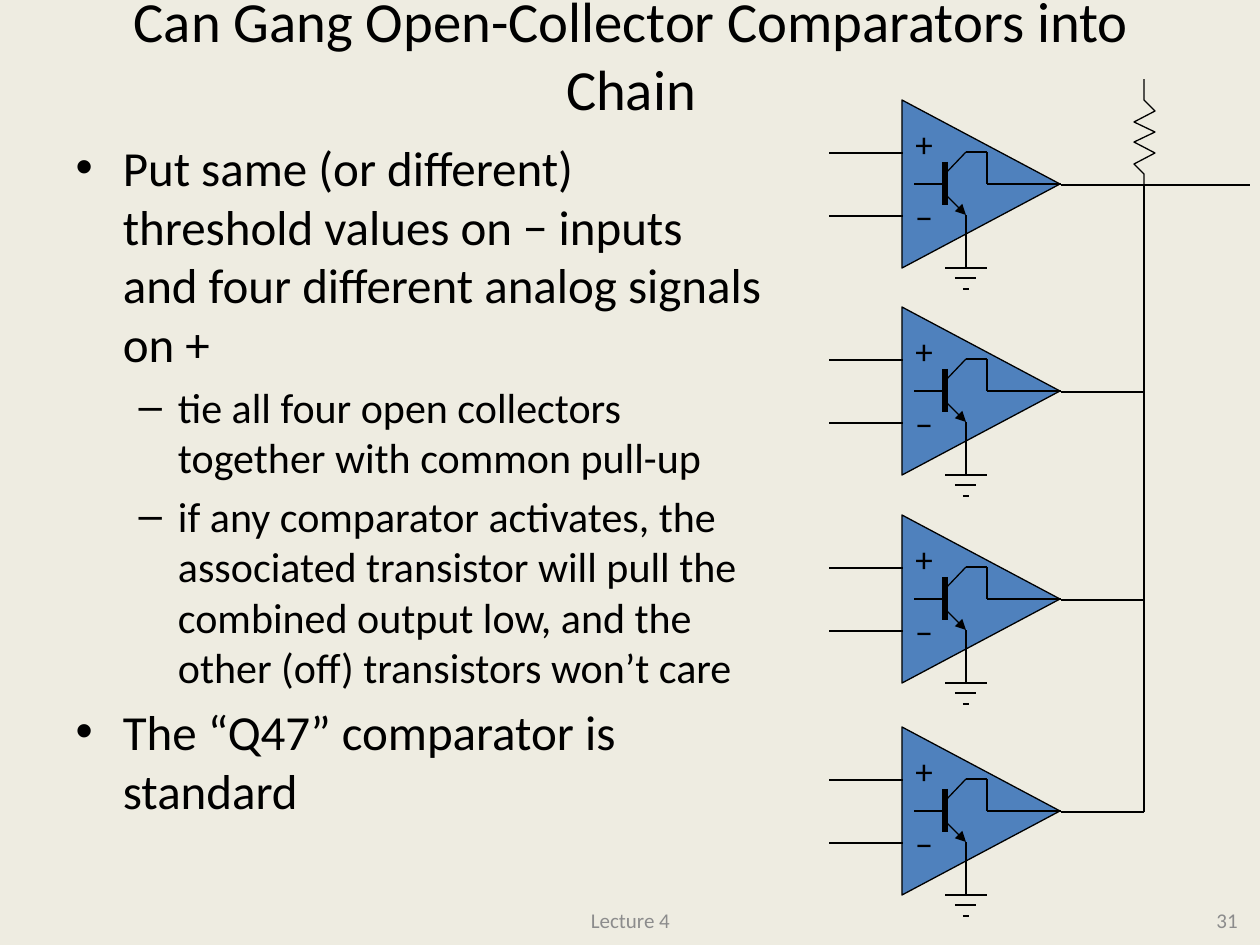
from lxml import etree
from pptx import Presentation
from pptx.dml.color import RGBColor
from pptx.enum.shapes import MSO_CONNECTOR, MSO_SHAPE
from pptx.enum.text import MSO_ANCHOR, MSO_AUTO_SIZE, PP_ALIGN
from pptx.oxml.ns import qn
from pptx.util import Pt

PX = 914400 / 126
STRAIGHT = MSO_CONNECTOR.STRAIGHT
TRIANGLE = MSO_SHAPE.ISOSCELES_TRIANGLE
MIDDLE = MSO_ANCHOR.MIDDLE
NO_AUTOFIT = MSO_AUTO_SIZE.NONE
LEFT, CENTER, RIGHT = PP_ALIGN.LEFT, PP_ALIGN.CENTER, PP_ALIGN.RIGHT

BACKGROUND = RGBColor(0xEE, 0xEC, 0xE1)
BLACK = RGBColor(0x00, 0x00, 0x00)
GRAY = RGBColor(0x8C, 0x8C, 0x8C)
BLUE = RGBColor(0x4F, 0x81, 0xBD)
FONT = "Calibri"

TITLE = "Can Gang Open-Collector Comparators into Chain"
BULLETS = [
    (0, "Put same (or different) threshold values on − inputs and four different analog signals on +"),
    (1, "tie all four open collectors together with common pull-up"),
    (1, "if any comparator activates, the associated transistor will pull the "
        "combined output low, and the other (off) transistors won’t care"),
    (0, "The “Q47” comparator is standard"),
]
BULLET_SIZES = (28, 24)

COMPARATOR_LEFT = 829
COMPARATOR_TOPS = (100, 307, 515, 727)
OUTPUT_X, OUTPUT_Y = 315, 85
COMPARATOR_WIRES = [
    (74, 53, 0, 53),
    (74, 116, 0, 116),
    (232, OUTPUT_Y, OUTPUT_X, OUTPUT_Y),
    (116, 74, 137, 52),
    (116, 84, 85, 84),
    (137, 115, 137, 157),
    (137, 52, 158, 52),
    (158, 52, 158, 84),
    (158, 84, 232, 84),
]
GROUND_WIRES = [(21, 0, 21, 21), (0, 21, 42, 21), (10, 31, 31, 31), (18, 42, 24, 42)]


def px(*lengths):
    """Convert pixel lengths to EMU."""
    return [round(length * PX) for length in lengths]


def set_font(paragraph, size, color):
    """Set the font of a whole paragraph."""
    paragraph.font.name = FONT
    paragraph.font.size = Pt(size)
    paragraph.font.color.rgb = color


def place(shape, left, top, width, height):
    """Move a placeholder to a pixel box."""
    shape.left, shape.top, shape.width, shape.height = px(left, top, width, height)


def add_label(shapes, box, text, size, color, alignment, wrap=True):
    """Add a one-line text box."""
    frame = shapes.add_textbox(*px(*box)).text_frame
    frame.word_wrap = wrap
    frame.vertical_anchor = MIDDLE
    paragraph = frame.paragraphs[0]
    paragraph.text = text
    paragraph.alignment = alignment
    set_font(paragraph, size, color)


def add_wire(shapes, left, top, wire, width=0.75, arrow=False):
    """Add a straight line given relative to a corner."""
    x1, y1, x2, y2 = wire
    connector = shapes.add_connector(
        STRAIGHT, *px(left + x1, top + y1, left + x2, top + y2))
    connector.line.color.rgb = BLACK
    connector.line.width = Pt(width)
    properties = connector.element.spPr
    if arrow:
        etree.SubElement(properties.find(qn("a:ln")), qn("a:tailEnd"), type="triangle")
    etree.SubElement(properties, qn("a:effectLst"))


def add_title(slide, box):
    """Fill the title placeholder."""
    title = slide.shapes.title
    place(title, *box)
    frame = title.text_frame
    frame.text = TITLE
    frame.auto_size = NO_AUTOFIT
    frame.vertical_anchor = MIDDLE
    set_font(frame.paragraphs[0], 32.4, BLACK)


def add_bullets(slide, box):
    """Fill the body placeholder with the two-level list."""
    body = slide.placeholders[1]
    place(body, *box)
    frame = body.text_frame
    frame.text = "\n".join(text for _, text in BULLETS)
    frame.auto_size = NO_AUTOFIT
    for paragraph, (level, _) in zip(frame.paragraphs, BULLETS):
        paragraph.level = level
        set_font(paragraph, BULLET_SIZES[level], BLACK)


def add_ground(slide, left, top):
    """Draw a ground symbol as a group."""
    shapes = slide.shapes.add_group_shape().shapes
    for wire in GROUND_WIRES:
        add_wire(shapes, left, top, wire)


def add_comparator(slide, left, top):
    """Draw one open-collector comparator with its output transistor."""
    shapes = slide.shapes.add_group_shape().shapes
    triangle = shapes.add_shape(TRIANGLE, *px(left + 68, top + 5, 168, 158))
    triangle.rotation = 90
    triangle.shadow.inherit = False
    triangle.fill.solid()
    triangle.fill.fore_color.rgb = BLUE
    triangle.line.color.rgb = BLACK
    triangle.line.width = Pt(0.75)
    for sign, offset in (("+", 16), ("−", 89)):
        add_label(shapes, (left + 74, top + offset, 45, 54), sign, 20, BLACK, LEFT, wrap=False)
    for wire in COMPARATOR_WIRES:
        add_wire(shapes, left, top, wire)
    add_wire(shapes, left, top, (116, 62, 116, 105), width=3)
    add_wire(shapes, left, top, (116, 94, 137, 115), arrow=True)
    add_ground(slide, left + 116, top + 147)


def add_resistor(slide, left, top):
    """Draw the vertical pull-up resistor."""
    zigzag = [(21 if i % 2 == 0 else 0, 32 + 10.5 * i) for i in range(6)]
    builder = slide.shapes.build_freeform(left + 10, top, scale=PX)
    builder.add_line_segments(
        [(left + x, top + y) for x, y in [(10, 21), *zigzag, (10, 95), (10, 106)]],
        close=False)
    resistor = builder.convert_to_shape()
    resistor.shadow.inherit = False
    resistor.fill.background()
    resistor.line.color.rgb = BLACK
    resistor.line.width = Pt(0.75)


def add_chain(slide, left, tops):
    """Draw the comparators, their shared output bus and the pull-up."""
    for top in tops:
        add_comparator(slide, left, top)
    bus_x = left + OUTPUT_X
    first_y, last_y = tops[0] + OUTPUT_Y, tops[-1] + OUTPUT_Y
    add_resistor(slide, bus_x - 10, first_y - 106)
    add_wire(slide.shapes, bus_x, first_y, (0, last_y - first_y, 0, 0), width=1)
    add_wire(slide.shapes, bus_x, first_y, (0, 0, 106, 0), width=1)


def add_footer(slide, top, height):
    """Add the lecture name and the page number."""
    add_label(slide.shapes, (431, top, 399, height), "Lecture 4", 12, GRAY, CENTER)
    add_label(slide.shapes, (956, top, 294, height), "31", 12, GRAY, RIGHT)


def main():
    """Build and save the slide."""
    presentation = Presentation()
    presentation.slide_width, presentation.slide_height = px(1260, 945)
    slide = presentation.slides.add_slide(presentation.slide_layouts[1])
    slide.background.fill.solid()
    slide.background.fill.fore_color.rgb = BACKGROUND
    add_title(slide, (50, 3, 1162, 101))
    add_bullets(slide, (63, 131, 711, 762))
    add_footer(slide, 895, 50)
    add_chain(slide, COMPARATOR_LEFT, COMPARATOR_TOPS)
    presentation.save("out.pptx")


if __name__ == "__main__":
    main()
